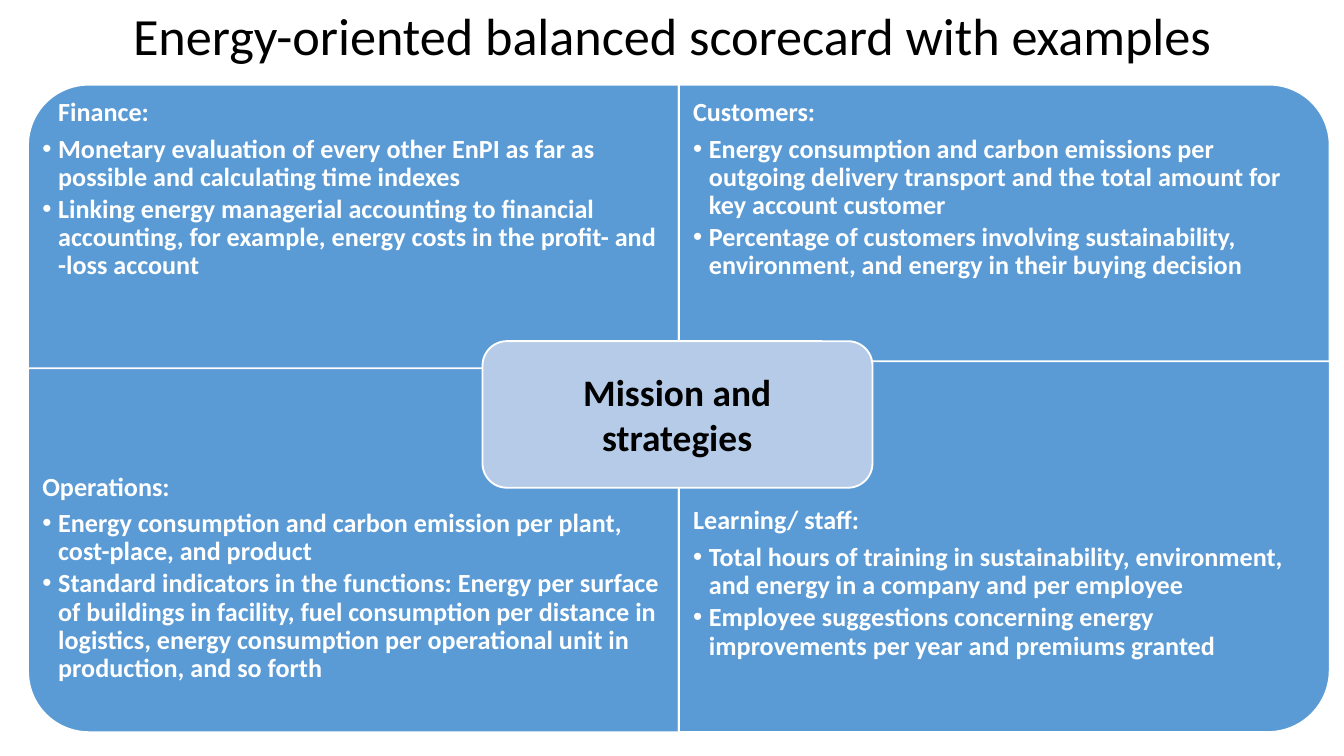
from lxml.etree import SubElement
from pptx import Presentation
from pptx.dml.color import RGBColor
from pptx.enum.shapes import MSO_SHAPE as Shape
from pptx.enum.text import MSO_ANCHOR as Anchor, PP_ALIGN as Align
from pptx.oxml.ns import qn
from pptx.util import Cm, Pt

BLUE = RGBColor(0x5B, 0x9B, 0xD5)
PALE_BLUE = RGBColor(0xB5, 0xCB, 0xE7)
WHITE = RGBColor(0xFF, 0xFF, 0xFF)
BLACK = RGBColor(0, 0, 0)

LEFT, MIDDLE, WIDTH = 0.53, 12.83, 12.3
TOP, BOTTOM = 1.6, 13.84
INDENT = 0.3

HEADING = {"line_spacing": 0.9, "space_after": Pt(4.5)}
ITEM = {"line_spacing": 0.9, "space_after": Pt(2)}
CENTRED = {"alignment": Align.CENTER}
TITLE = {"alignment": Align.CENTER, "line_spacing": 0.9}

BODY_FONT = {"name": "Calibri", "size": Pt(14), "bold": True}
CORE_FONT = {"name": "Calibri", "size": Pt(20), "bold": True}
TITLE_FONT = {"name": "Calibri", "size": Pt(28), "bold": False}

QUADRANTS = [
    dict(left=LEFT, top=TOP, height=6.88, rotation=270, text_top=TOP,
         heading="Finance:", heading_indent=INDENT,
         items=["Monetary evaluation of every other EnPI as far as possible "
                "and calculating time indexes",
                "Linking energy managerial accounting to financial accounting, "
                "for example, energy costs in the profit- and -loss account"]),
    dict(left=MIDDLE, top=TOP, height=6.88, rotation=0, text_top=TOP,
         heading="Customers:", heading_indent=0,
         items=["Energy consumption and carbon emissions per outgoing delivery "
                "transport and the total amount for key account customer",
                "Percentage of customers involving sustainability, environment, "
                "and energy in their buying decision"]),
    dict(left=LEFT, top=6.96, height=6.88, rotation=180, text_top=8.68,
         heading="Operations:", heading_indent=0,
         items=["Energy consumption and carbon emission per plant, cost-place, "
                "and product",
                "Standard indicators in the functions: Energy per surface of "
                "buildings in facility, fuel consumption per distance in "
                "logistics, energy consumption per operational unit in "
                "production, and so forth"]),
    dict(left=MIDDLE, top=6.83, height=7.01, rotation=90, text_top=9.32,
         heading="Learning/ staff:", heading_indent=0,
         items=["Total hours of training in sustainability, environment, and "
                "energy in a company and per employee",
                "Employee suggestions concerning energy improvements per year "
                "and premiums granted"]),
]


def apply_format(target, values):
    for name, value in values.items():
        setattr(target, name, value)


def add_panel(slide, preset, left, top, width, height, fill, rotation=0):
    centre_x, centre_y = left + width / 2, top + height / 2
    if rotation % 180:
        width, height = height, width
    shape = slide.shapes.add_shape(preset, Cm(centre_x - width / 2),
                                   Cm(centre_y - height / 2),
                                   Cm(width), Cm(height))
    shape.rotation = rotation
    shape.shadow.inherit = False
    shape.fill.solid()
    shape.fill.fore_color.rgb = fill
    shape.line.color.rgb = WHITE
    shape.line.width = Pt(1)


def add_text_frame(slide, left, top, width, height, inset, anchor):
    box = slide.shapes.add_textbox(Cm(left), Cm(top), Cm(width), Cm(height))
    frame = box.text_frame
    apply_format(frame, {"word_wrap": True, "vertical_anchor": anchor})
    for side in ("left", "top", "right", "bottom"):
        setattr(frame, f"margin_{side}", Cm(inset))
    return frame


def write_paragraph(frame, text, paragraph_format, font_format, color):
    first = frame.paragraphs[0]
    paragraph = frame.add_paragraph() if first.runs else first
    apply_format(paragraph, paragraph_format)
    run = paragraph.add_run()
    run.text = text
    apply_format(run.font, font_format)
    run.font.color.rgb = color
    return paragraph


def set_indent(paragraph, left, first_line=0):
    properties = paragraph._p.get_or_add_pPr()
    properties.set("marL", str(Cm(left)))
    properties.set("indent", str(Cm(first_line)))
    return properties


def add_bullet(paragraph):
    properties = set_indent(paragraph, INDENT, -INDENT)
    SubElement(properties, qn("a:buFont")).set("typeface", "Arial")
    SubElement(properties, qn("a:buChar")).set("char", "•")


def add_quadrant_text(slide, quadrant):
    top = quadrant["text_top"]
    height = min(5.16, BOTTOM - top)
    frame = add_text_frame(slide, quadrant["left"], top, WIDTH, height,
                           0.27, Anchor.TOP)
    heading = write_paragraph(frame, quadrant["heading"], HEADING, BODY_FONT, WHITE)
    set_indent(heading, quadrant["heading_indent"])
    for item in quadrant["items"]:
        add_bullet(write_paragraph(frame, item, ITEM, BODY_FONT, WHITE))


def main():
    presentation = Presentation()
    presentation.slide_width = Cm(25.4)
    presentation.slide_height = Cm(14.29)
    slide = presentation.slides.add_slide(presentation.slide_layouts[6])

    for quadrant in QUADRANTS:
        add_panel(slide, Shape.ROUND_1_RECTANGLE, quadrant["left"],
                  quadrant["top"], WIDTH, quadrant["height"], BLUE,
                  quadrant["rotation"])
        add_quadrant_text(slide, quadrant)

    add_panel(slide, Shape.ROUNDED_RECTANGLE, 9.12, 6.45, 7.37, 2.77, PALE_BLUE)
    core = add_text_frame(slide, 9.25, 6.58, 7.1, 2.5, 0.2, Anchor.MIDDLE)
    for line in ("Mission and", "strategies"):
        write_paragraph(core, line, CENTRED, CORE_FONT, BLACK)

    title = add_text_frame(slide, 1.75, 0, 21.9, 1.45, 0.13, Anchor.MIDDLE)
    write_paragraph(title, "Energy-oriented balanced scorecard with examples",
                    TITLE, TITLE_FONT, BLACK)

    presentation.save("out.pptx")


if __name__ == "__main__":
    main()
